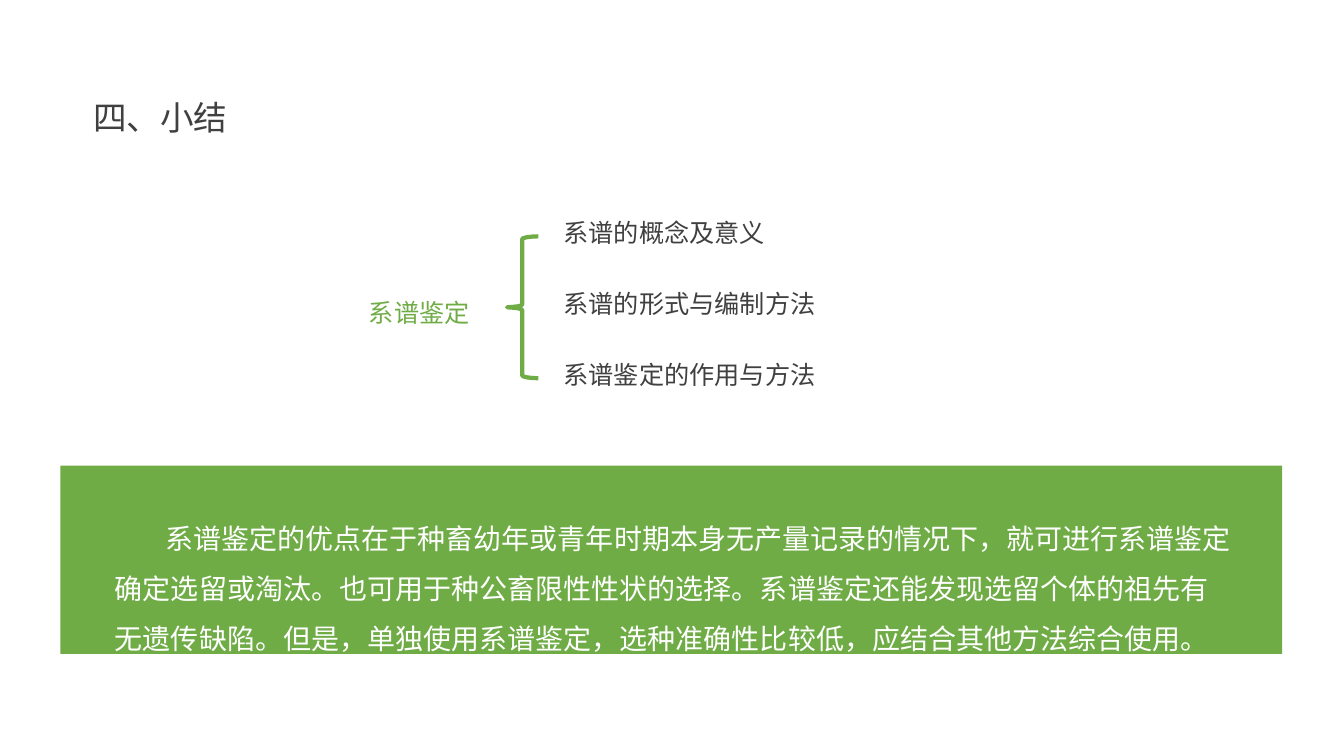
from pptx import Presentation
from pptx.dml.color import RGBColor
from pptx.enum.shapes import MSO_SHAPE
from pptx.enum.text import MSO_ANCHOR, PP_ALIGN
from pptx.util import Pt

GREEN = RGBColor(0x6F, 0xAC, 0x46)
DARK = RGBColor(0x40, 0x40, 0x40)
WHITE = RGBColor(0xFF, 0xFF, 0xFF)
FONT = "Noto Sans CJK SC"
RECTANGLE = MSO_SHAPE.RECTANGLE
TOP, MIDDLE = MSO_ANCHOR.TOP, MSO_ANCHOR.MIDDLE
LEFT = PP_ALIGN.LEFT


def write_text(shape, text, size, color, line_height, anchor=TOP, wrap=True,
               margins=(0, 0, 0, 0), indent=0):
    frame = shape.text_frame
    frame.word_wrap = wrap
    frame.vertical_anchor = anchor
    frame.margin_left, frame.margin_top, frame.margin_right, frame.margin_bottom = map(Pt, margins)
    paragraph = frame.paragraphs[0]
    paragraph.alignment = LEFT
    paragraph.line_spacing = Pt(line_height)
    properties = paragraph._p.get_or_add_pPr()
    properties.set("indent", str(Pt(indent)))
    run = paragraph.add_run()
    run.text = text
    run.font.size = Pt(size)
    run.font.color.rgb = color
    run.font.name = FONT
    latin = run.font._element.find("{*}latin")
    east_asian = latin.makeelement(latin.tag.replace("latin", "ea"), {"typeface": FONT})
    latin.addnext(east_asian)


presentation = Presentation()
presentation.slide_width = Pt(960)
presentation.slide_height = Pt(540)
slide = presentation.slides.add_slide(presentation.slide_layouts[6])
shapes = slide.shapes

# Title
title = shapes.add_textbox(Pt(66.5), Pt(30), Pt(828), Pt(104))
write_text(title, "四、小结", 24, DARK, 32, anchor=MIDDLE)

# Topic and its three branches
topic = shapes.add_textbox(Pt(263.5), Pt(210), Pt(74), Pt(24))
write_text(topic, "系谱鉴定", 18, GREEN, 24, wrap=False)

branches = ["系谱的概念及意义", "系谱的形式与编制方法", "系谱鉴定的作用与方法"]
for index, branch in enumerate(branches):
    box = shapes.add_textbox(Pt(402.5), Pt(153 + 50.5 * index), Pt(182), Pt(24))
    write_text(box, branch, 18, DARK, 24, wrap=False)

# Brace: upper half from tip to end, mirrored for the lower half
BRACE_MIDDLE = 219.5
upper_half = [(362.2, 0), (366.5, 0.3), (370, 0.7), (372.2, 1.3), (373, 2.1),
              (373, 48.7), (373.8, 49.4), (376.5, 50.1), (380.2, 50.5), (384.5, 50.7)]
points = [(x, BRACE_MIDDLE - y) for x, y in reversed(upper_half)]
points += [(x, BRACE_MIDDLE + y) for x, y in upper_half[1:]]
builder = shapes.build_freeform(Pt(points[0][0]), Pt(points[0][1]))
builder.add_line_segments([(Pt(x), Pt(y)) for x, y in points[1:]], close=False)
brace = builder.convert_to_shape()
brace.shadow.inherit = False
brace.fill.background()
brace.line.color.rgb = GREEN
brace.line.width = Pt(3)

# Summary panel
panel = shapes.add_shape(RECTANGLE, Pt(43.2), Pt(332.6), Pt(872.6), Pt(134.6))
panel.shadow.inherit = False
panel.fill.solid()
panel.fill.fore_color.rgb = GREEN
panel.line.fill.background()
summary = (
    "系谱鉴定的优点在于种畜幼年或青年时期本身无产量记录的情况下，就可进行系谱鉴定"
    "确定选留或淘汰。也可用于种公畜限性性状的选择。系谱鉴定还能发现选留个体的祖先有"
    "无遗传缺陷。但是，单独使用系谱鉴定，选种准确性比较低，应结合其他方法综合使用。"
)
write_text(panel, summary, 20, WHITE, 35.7, margins=(38.9, 28, 35, 0), indent=36)

presentation.save("out.pptx")
